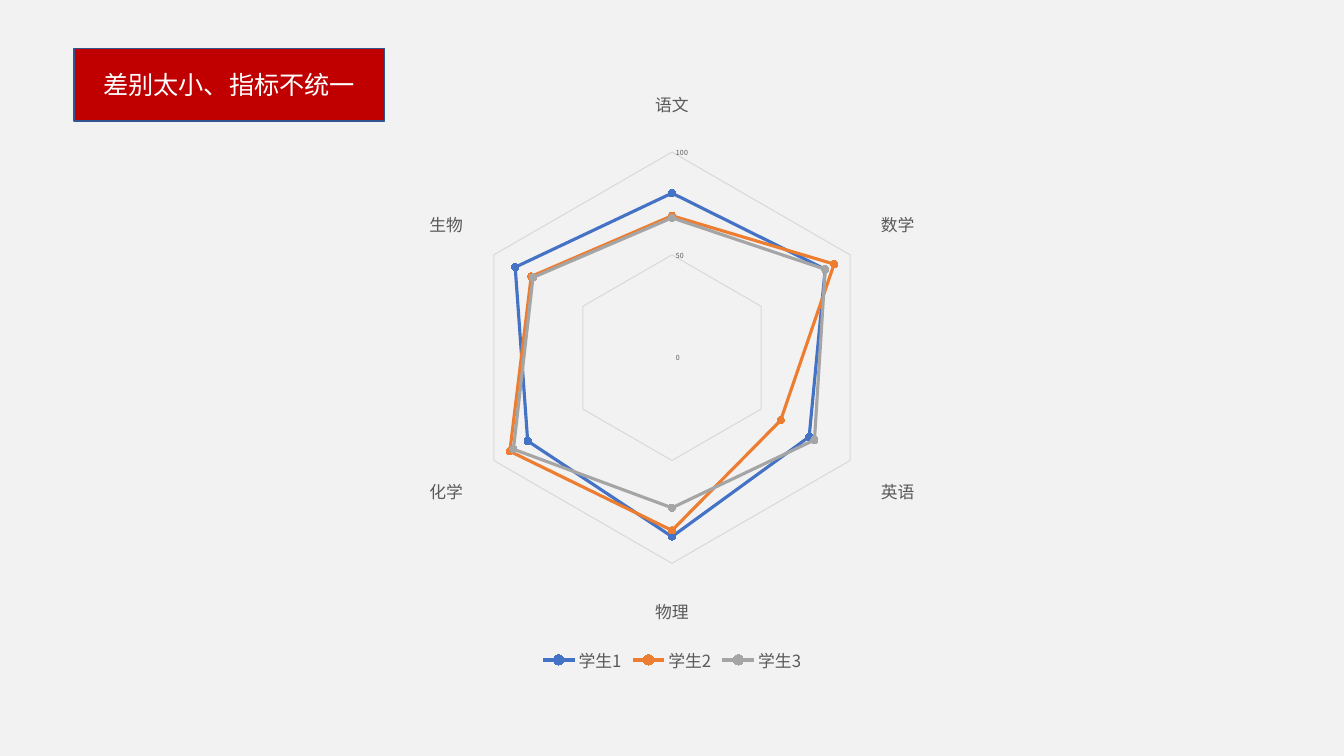
from dataclasses import dataclass

from pptx import Presentation
from pptx import util as u
from pptx.chart import data as chart_data
from pptx.dml import color
from pptx.enum import chart as ch, shapes, text
from pptx.oxml.ns import qn

HEADLINE = "差别太小、指标不统一"
SUBJECTS = ["语文", "数学", "英语", "物理", "化学", "生物"]
SCORES = {
    "学生1": [80, 86, 77, 87, 81, 88],
    "学生2": [69, 91, 61, 84, 91, 79],
    "学生3": [68, 86, 80, 73, 89, 78],
}
SCALE = {"minimum_scale": 0, "maximum_scale": 100, "major_unit": 50}


@dataclass(frozen=True)
class Theme:
    face: str = "Noto Sans CJK SC"
    page: str = "F2F2F2"
    banner: str = "C00000"
    banner_edge: str = "325491"
    on_banner: str = "FFFFFF"
    label: str = "595959"
    grid: str = "D9D9D9"
    students: tuple = ("4472C4", "ED7D31", "A5A5A5")
    headline_size: float = 18
    base_size: float = 10
    label_size: float = 12
    scale_size: float = 5
    grid_width: float = 0.75
    student_width: float = 2.25
    marker_size: int = 5


THEME = Theme()
WIDTH, HEIGHT = u.Inches(13.33), u.Inches(7.5)
RADAR_SHARE = (1 / 6, 0.105, 2 / 3, 0.79)
BANNER_SHARE = (0.055, 0.064, 0.231, 0.096)


def place(share):
    return [round(part * side) for part, side in zip(share, (WIDTH, HEIGHT) * 2)]


def apply(target, values):
    for name, value in values.items():
        setattr(target, name, value)


def paint(fill, tone):
    fill.solid()
    fill.fore_color.rgb = color.RGBColor.from_string(tone)


def stroke(line, tone, width):
    paint(line.fill, tone)
    line.width = u.Pt(width)


def style_font(font, size, tone):
    apply(font, {"name": THEME.face, "size": u.Pt(size), "bold": False})
    paint(font.fill, tone)
    latin = font._element.find(qn("a:latin")) if hasattr(font, "_element") else font._rPr.find(qn("a:latin"))
    east_asian = latin.makeelement(qn("a:ea"), {"typeface": THEME.face})
    latin.addnext(east_asian)


def add_radar(slide):
    scores = chart_data.CategoryChartData()
    scores.categories = SUBJECTS
    for student, marks in SCORES.items():
        scores.add_series(student, marks)
    radar = slide.shapes.add_chart(
        ch.XL_CHART_TYPE.RADAR_MARKERS, *place(RADAR_SHARE), scores
    ).chart
    apply(radar, {"has_title": False, "has_legend": True})
    style_font(radar.font, THEME.base_size, "000000")
    radar.plots[0].vary_by_categories = False

    apply(radar.legend, {
        "position": ch.XL_LEGEND_POSITION.BOTTOM,
        "include_in_layout": False,
    })
    style_font(radar.legend.font, THEME.label_size, THEME.label)

    subject_axis, score_axis = radar.category_axis, radar.value_axis
    for axis, size in ((subject_axis, THEME.label_size), (score_axis, THEME.scale_size)):
        apply(axis, {
            "has_major_gridlines": True,
            "major_tick_mark": ch.XL_TICK_MARK.NONE,
            "minor_tick_mark": ch.XL_TICK_MARK.NONE,
        })
        style_font(axis.tick_labels.font, size, THEME.label)
        stroke(axis.major_gridlines.format.line, THEME.grid, THEME.grid_width)
    apply(score_axis, SCALE)
    stroke(subject_axis.format.line, THEME.grid, THEME.grid_width)
    score_axis.format.line.fill.background()

    for student, tone in zip(radar.plots[0].series, THEME.students):
        student.smooth = False
        stroke(student.format.line, tone, THEME.student_width)
        apply(student.marker, {
            "style": ch.XL_MARKER_STYLE.CIRCLE,
            "size": THEME.marker_size,
        })
        paint(student.marker.format.fill, tone)
        stroke(student.marker.format.line, tone, THEME.grid_width)


def add_banner(slide):
    banner = slide.shapes.add_shape(shapes.MSO_SHAPE.RECTANGLE, *place(BANNER_SHARE))
    banner.shadow.inherit = False
    paint(banner.fill, THEME.banner)
    stroke(banner.line, THEME.banner_edge, 1)
    apply(banner.text_frame, {
        "word_wrap": True,
        "vertical_anchor": text.MSO_ANCHOR.MIDDLE,
    })
    paragraph = banner.text_frame.paragraphs[0]
    paragraph.alignment = text.PP_ALIGN.CENTER
    headline = paragraph.add_run()
    headline.text = HEADLINE
    style_font(headline.font, THEME.headline_size, THEME.on_banner)


def main():
    deck = Presentation()
    apply(deck, {"slide_width": WIDTH, "slide_height": HEIGHT})
    slide = deck.slides.add_slide(deck.slide_layouts[6])
    paint(slide.background.fill, THEME.page)
    add_radar(slide)
    add_banner(slide)
    deck.save("out.pptx")


if __name__ == "__main__":
    main()
